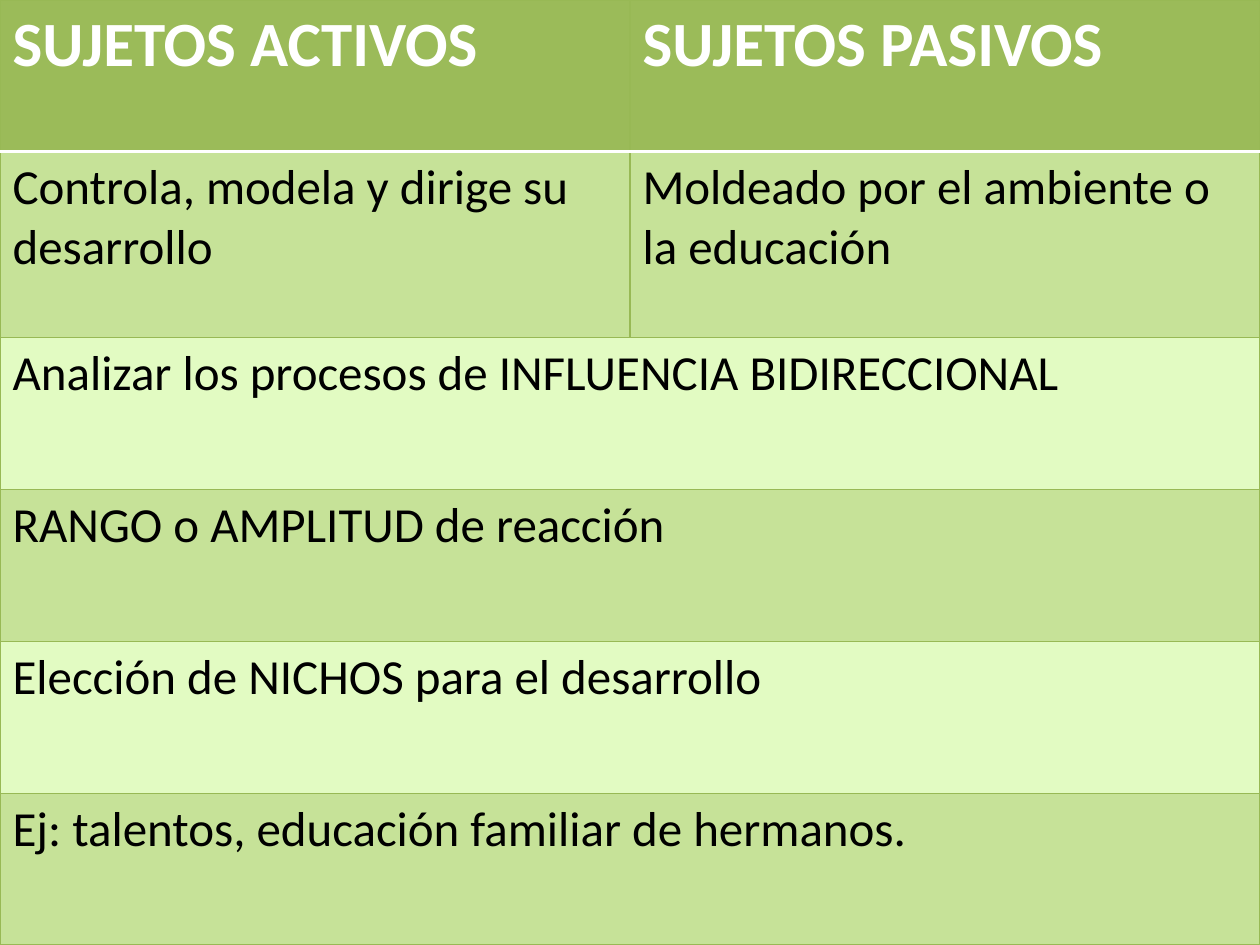
"""Build a slide with a full-page table on active and passive subjects."""
from dataclasses import dataclass

from lxml import etree
from pptx import Presentation
from pptx import util as u
from pptx.dml.color import RGBColor
from pptx.oxml.ns import qn
from pptx.table import Table, _Cell

COLORS = {
    "header": "9BBB59",
    "dark": "C6E298",
    "light": "E2FBC2",
    "border": "98B955",
    "white": "FFFFFF",
    "black": "000000",
}
HEADER_FONT = {"name": "Calibri", "size": u.Pt(36), "bold": True}
BODY_FONT = {"name": "Calibri", "size": u.Pt(28), "bold": False}
WIDTH, HEIGHT = u.Cm(25.4), u.Cm(19.05)
COLUMNS = 2


@dataclass(frozen=True)
class Row:
    texts: tuple[str, ...]
    fill: str
    height: float = 3.06


ROWS = (
    Row(("SUJETOS ACTIVOS", "SUJETOS PASIVOS"), "header"),
    Row(("Controla, modela y dirige su desarrollo",
         "Moldeado por el ambiente o la educación"), "dark", 3.75),
    Row(("Analizar los procesos de INFLUENCIA BIDIRECCIONAL",), "light"),
    Row(("RANGO o AMPLITUD de reacción",), "dark"),
    Row(("Elección de NICHOS para el desarrollo",), "light"),
    Row(("Ej: talentos, educación familiar de hermanos.",), "dark"),
)


def draw_border(cell: _Cell, side: str, color: str, points: float) -> None:
    properties = cell._tc.get_or_add_tcPr()
    line = etree.SubElement(properties, qn(f"a:ln{side}"), w=str(u.Pt(points)))
    fill = etree.SubElement(line, qn("a:solidFill"))
    etree.SubElement(fill, qn("a:srgbClr"), val=COLORS[color])


def format_cell(cell: _Cell, index: int, fill: str) -> None:
    header_edge = {0: "B", 1: "T"}.get(index)
    for side in "LRTB":
        color, points = ("white", 2) if side == header_edge else ("border", 0.75)
        draw_border(cell, side, color, points)
    cell.fill.solid()
    cell.fill.fore_color.rgb = RGBColor.from_string(COLORS[fill])


def write_cell(cell: _Cell, words: str, header: bool) -> None:
    span = cell.text_frame.paragraphs[0].add_run()
    span.text = words
    for name, value in (HEADER_FONT if header else BODY_FONT).items():
        setattr(span.font, name, value)
    color = COLORS["white" if header else "black"]
    span.font.color.rgb = RGBColor.from_string(color)


def fill_row(table: Table, index: int, row: Row) -> None:
    table.rows[index].height = u.Cm(row.height)
    for column in range(COLUMNS):
        format_cell(table.cell(index, column), index, row.fill)
    if len(row.texts) == 1:
        table.cell(index, 0).merge(table.cell(index, COLUMNS - 1))
    for column, words in enumerate(row.texts):
        write_cell(table.cell(index, column), words, index == 0)


def main() -> None:
    deck = Presentation()
    deck.slide_width, deck.slide_height = WIDTH, HEIGHT
    page = deck.slides.add_slide(deck.slide_layouts[6])
    table = page.shapes.add_table(len(ROWS), COLUMNS, 0, 0, WIDTH, HEIGHT).table
    table.horz_banding = False
    for index, row in enumerate(ROWS):
        fill_row(table, index, row)
    deck.save("out.pptx")


if __name__ == "__main__":
    main()
